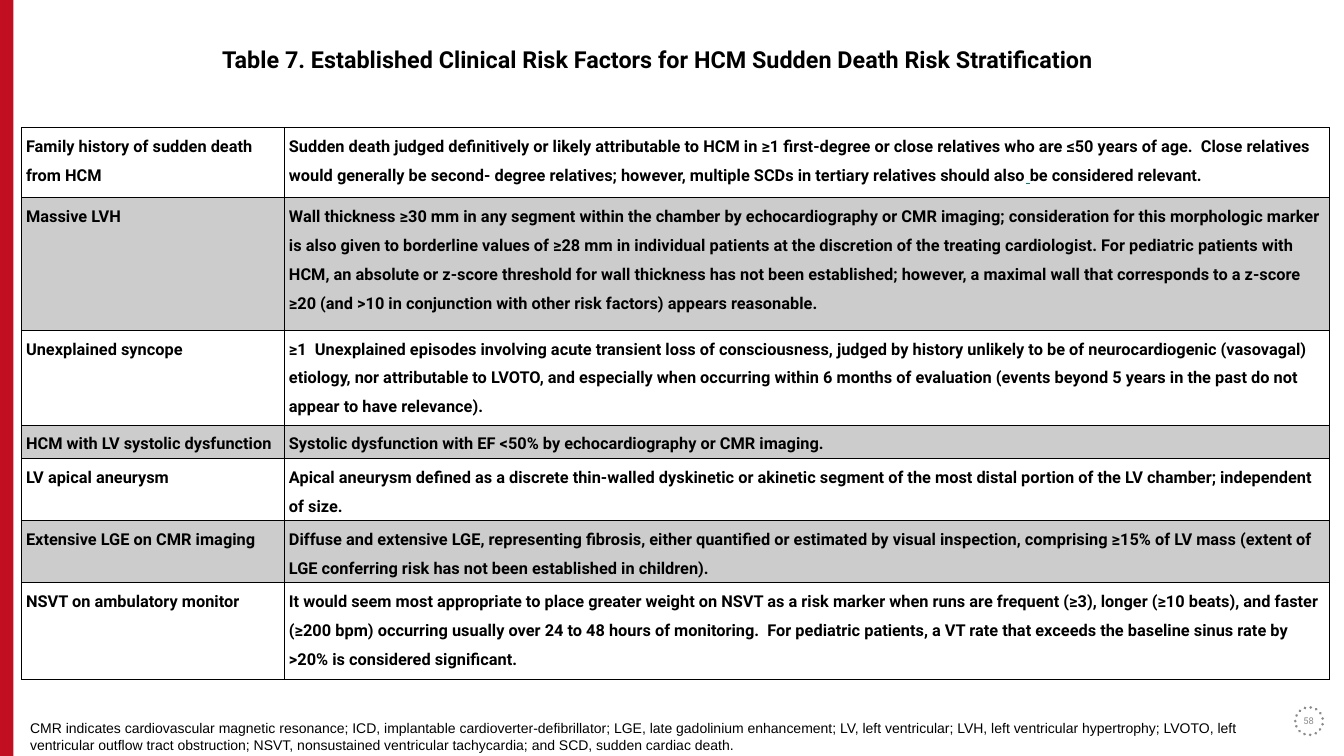
from lxml import etree
from pptx import Presentation
from pptx.dml.color import RGBColor
from pptx.enum import dml, shapes, text
from pptx.oxml.ns import qn
from pptx.util import Inches, Pt

RED = RGBColor(0xC1, 0x0E, 0x21)
BLACK = RGBColor(0, 0, 0)
GRAY = RGBColor(0x8A, 0x8B, 0x8A)
BAND = RGBColor(0xCC, 0xCC, 0xCC)
TEAL = RGBColor(0, 0x80, 0x80)

COLUMN_WIDTHS = [3.13, 12.44]
# Risk factor, definition, row height
RISK_FACTORS = [
    ("Family history of sudden death from HCM",
     ["Sudden death judged definitively or likely attributable to HCM in ≥1 first-degree or close "
      "relatives who are ≤50 years of age.  Close relatives would generally be second- degree "
      "relatives; however, multiple SCDs in tertiary relatives should also",
      " ", "be considered relevant."], 0.83),
    ("Massive LVH",
     ["Wall thickness ≥30 mm in any segment within the chamber by echocardiography or CMR imaging; "
      "consideration for this morphologic marker is also given to borderline values of ≥28 mm in "
      "individual patients at the discretion of the treating cardiologist. For pediatric patients "
      "with HCM, an absolute or z-score threshold for wall thickness has not been established; "
      "however, a maximal wall that corresponds to a z-score ≥20 (and >10 in conjunction with "
      "other risk factors) appears reasonable."], 1.58),
    ("Unexplained syncope",
     ["≥1  Unexplained episodes involving acute transient loss of consciousness, judged by history "
      "unlikely to be of neurocardiogenic (vasovagal) etiology, nor attributable to LVOTO, and "
      "especially when occurring within 6 months of evaluation (events beyond 5 years in the past "
      "do not appear to have relevance)."], 1.13),
    ("HCM with LV systolic dysfunction",
     ["Systolic dysfunction with EF <50% by echocardiography or CMR imaging."], 0.4),
    ("LV apical aneurysm",
     ["Apical aneurysm defined as a discrete thin-walled dyskinetic or akinetic segment of the "
      "most distal portion of the LV chamber; independent of size."], 0.74),
    ("Extensive LGE on CMR imaging",
     ["Diffuse and extensive LGE, representing fibrosis, either quantified or estimated by visual "
      "inspection, comprising ≥15% of LV mass (extent of LGE conferring risk has not been "
      "established in children)."], 0.74),
    ("NSVT on ambulatory monitor",
     ["It would seem most appropriate to place greater weight on NSVT as a risk marker when runs "
      "are frequent (≥3), longer (≥10 beats), and faster (≥200 bpm) occurring usually over 24 to "
      "48 hours of monitoring.  For pediatric patients, a VT rate that exceeds the baseline sinus "
      "rate by >20% is considered significant."], 1.15),
]
ABBREVIATIONS = (
    "CMR indicates cardiovascular magnetic resonance; ICD, implantable cardioverter-defibrillator; "
    "LGE, late gadolinium enhancement; LV, left ventricular; LVH, left ventricular hypertrophy; "
    "LVOTO, left ventricular outflow tract obstruction; NSVT, nonsustained ventricular "
    "tachycardia; and SCD, sudden cardiac death.")


def set_font(font, name, size, color, bold=False):
    font.name = name
    font.size = Pt(size)
    font.bold = bold
    font.color.rgb = color


def add_borders(cell):
    properties = cell._tc.get_or_add_tcPr()
    for index, side in enumerate(("lnL", "lnR", "lnT", "lnB")):
        line = etree.Element(qn(f"a:{side}"), w=str(Pt(1)))
        fill = etree.SubElement(line, qn("a:solidFill"))
        etree.SubElement(fill, qn("a:srgbClr"), val=str(BLACK))
        properties.insert(index, line)


deck = Presentation()
deck.slide_width, deck.slide_height = Inches(16), Inches(9)
page = deck.slides.add_slide(deck.slide_layouts[5])

# Red edge
edge = page.shapes.add_shape(
    shapes.MSO_SHAPE.RECTANGLE, 0, 0, Inches(0.16), Inches(9))
edge.shadow.inherit = False
edge.fill.solid()
edge.fill.fore_color.rgb = RED
edge.line.fill.background()

# Page number in a dotted ring
ring = page.shapes.add_shape(
    shapes.MSO_SHAPE.OVAL, Inches(15.42), Inches(8.42), Inches(0.33), Inches(0.33))
ring.shadow.inherit = False
ring.fill.background()
ring.line.color.rgb = GRAY
ring.line.width = Pt(2.5)
ring.line.dash_style = dml.MSO_LINE.ROUND_DOT
ring.line._get_or_add_ln().set("cap", "rnd")

number = page.shapes.add_textbox(Inches(15.34), Inches(8.34), Inches(0.48), Inches(0.48))
number.text_frame.vertical_anchor = text.MSO_ANCHOR.MIDDLE
number.text_frame.word_wrap = True
para = number.text_frame.paragraphs[0]
para.text = "58"
para.alignment = text.PP_ALIGN.CENTER
set_font(para.font, "Roboto", 8, GRAY)

# Risk factor table
table = page.shapes.add_table(
    len(RISK_FACTORS), 2, Inches(0.26), Inches(1.52),
    Inches(sum(COLUMN_WIDTHS)), Inches(sum(row[2] for row in RISK_FACTORS))).table
table.first_row = False
table.horz_banding = False
for column, width in zip(table.columns, COLUMN_WIDTHS):
    column.width = Inches(width)
for index, (factor, definition, height) in enumerate(RISK_FACTORS):
    table.rows[index].height = Inches(height)
    for cell, parts in zip(table.rows[index].cells, ([factor], definition)):
        cell.margin_left = cell.margin_right = Inches(0.05)
        cell.margin_top = cell.margin_bottom = 0
        if index % 2:
            cell.fill.solid()
            cell.fill.fore_color.rgb = BAND
        else:
            cell.fill.background()
        add_borders(cell)
        para = cell.text_frame.paragraphs[0]
        para.line_spacing = 1.5
        set_font(para.font, "Roboto", 14, BLACK, bold=True)
        for part in parts:
            span = para.add_run()
            span.text = part
            set_font(span.font, "Roboto", 14, BLACK, bold=True)
            if part == " ":
                span.font.underline = True
                span.font.color.rgb = TEAL

# Title
title = page.shapes.title
title.left, title.top = Inches(2.08), Inches(0.48)
title.width, title.height = Inches(11.5), Inches(0.44)
title.text_frame.vertical_anchor = text.MSO_ANCHOR.MIDDLE
title.text_frame.auto_size = text.MSO_AUTO_SIZE.NONE
para = title.text_frame.paragraphs[0]
para.text = "Table 7. Established Clinical Risk Factors for HCM Sudden Death Risk Stratification"
para.alignment = text.PP_ALIGN.CENTER
set_font(para.font, "Roboto", 20, BLACK, bold=True)

# Abbreviations, ending left of the page number
note = page.shapes.add_textbox(Inches(0.26), Inches(8.52), Inches(15.08), Inches(0.5))
note.text_frame.word_wrap = True
para = note.text_frame.paragraphs[0]
para.text = ABBREVIATIONS
set_font(para.font, "Arial", 12, BLACK)

deck.save("out.pptx")
